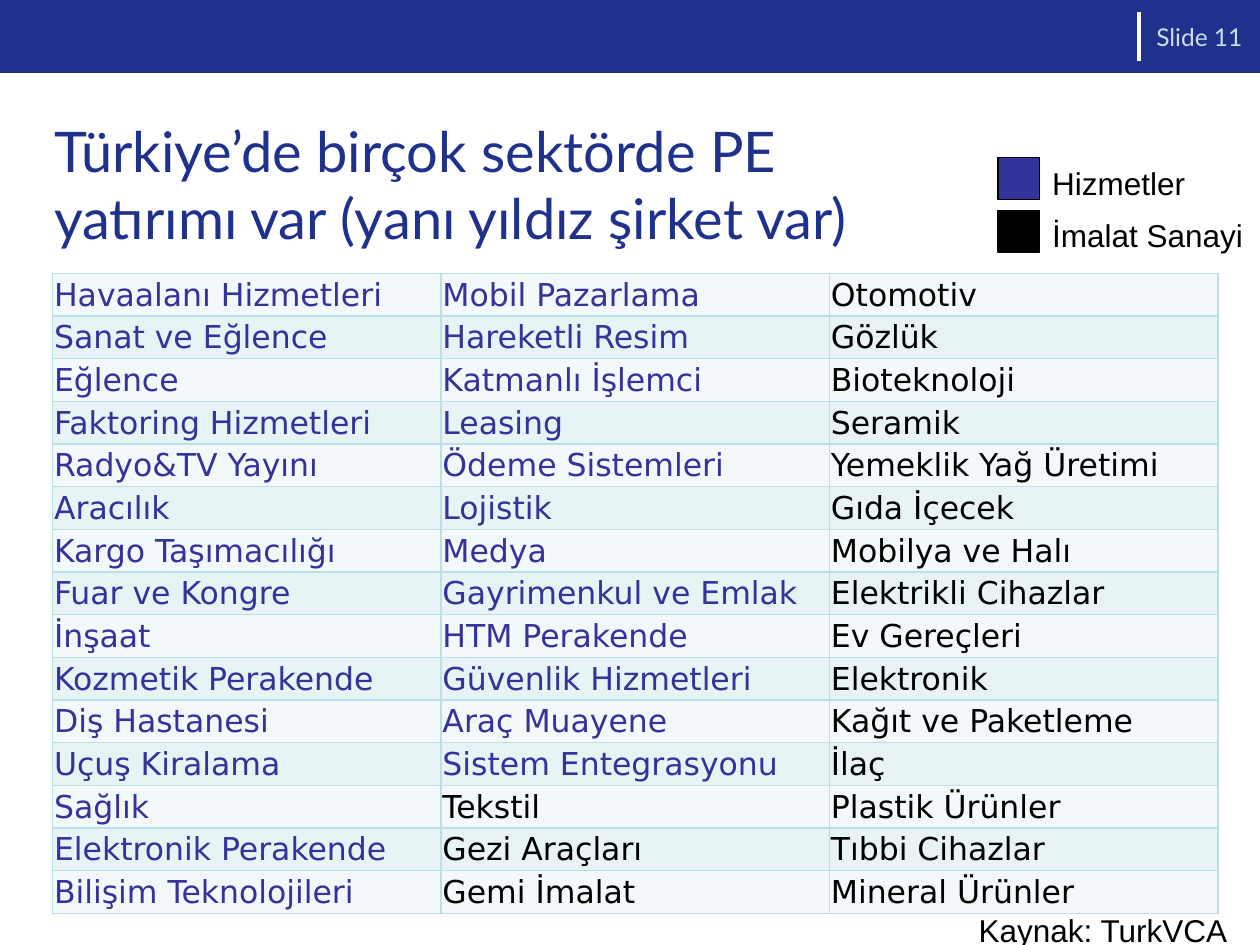
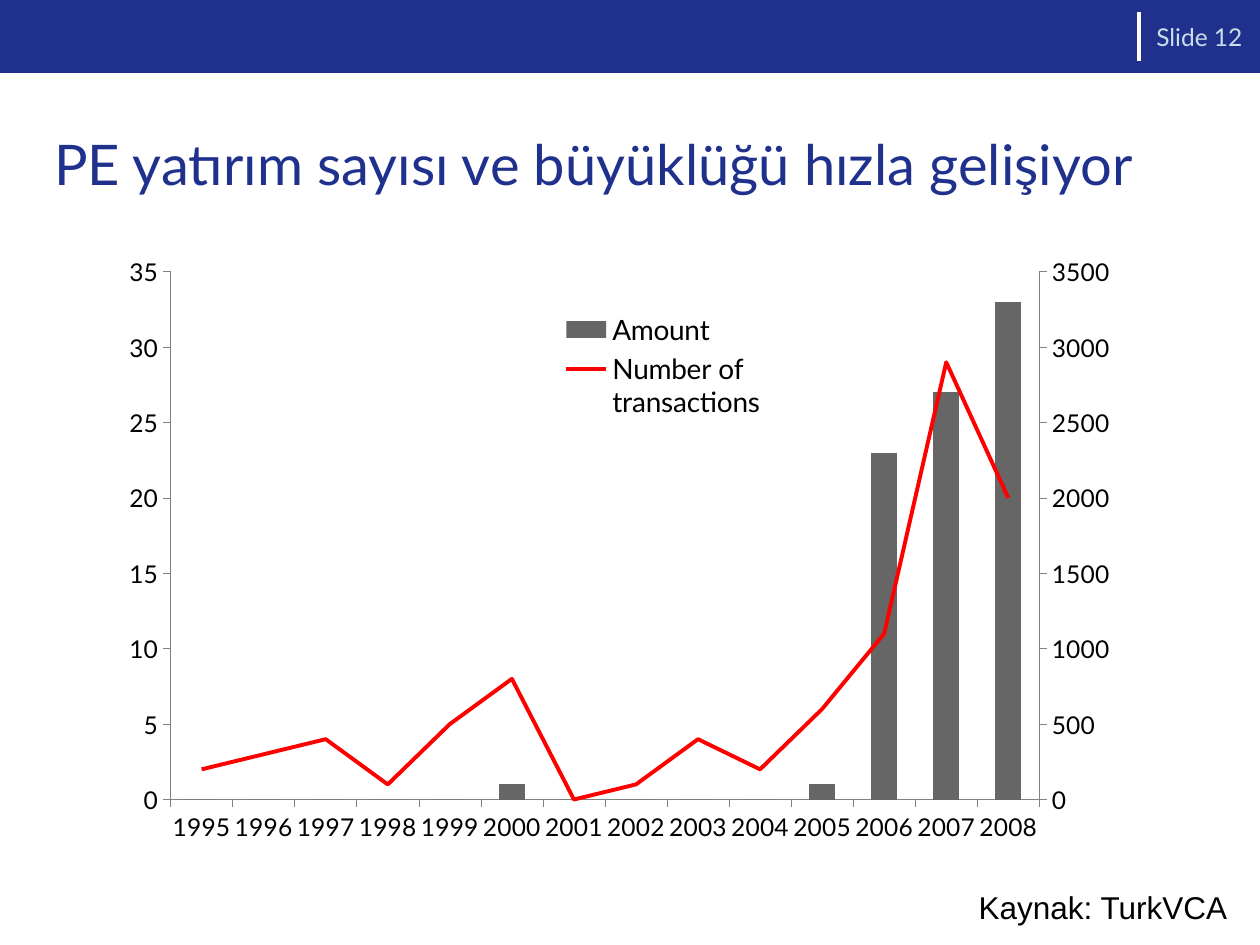
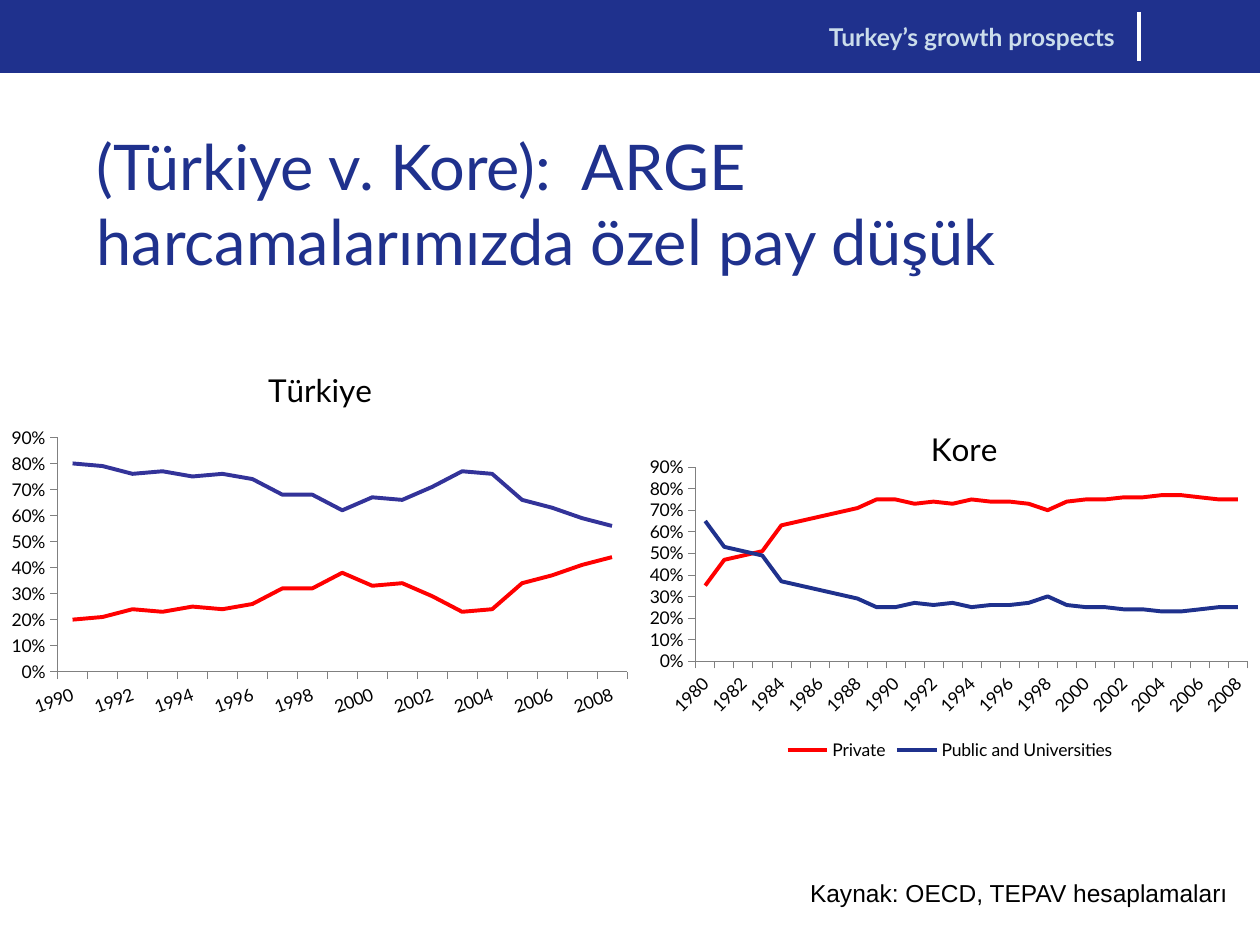
"""Build three slides on private equity and R&D spending in Türkiye."""
import copy

import pptx
import pptx.chart.axis
import pptx.chart.data
import pptx.dml.color
import pptx.enum.chart
import pptx.enum.shapes
import pptx.enum.text
import pptx.oxml
import pptx.oxml.ns
import pptx.util

Cm = pptx.util.Cm
Pt = pptx.util.Pt
RGBColor = pptx.dml.color.RGBColor
ChartType = pptx.enum.chart.XL_CHART_TYPE
Anchor = pptx.enum.text.MSO_ANCHOR
Align = pptx.enum.text.PP_ALIGN
qn = pptx.oxml.ns.qn

NAVY = RGBColor(0x1F, 0x31, 0x8D)
INDIGO = RGBColor(0x33, 0x33, 0x99)
PALE_BLUE = RGBColor(0xCB, 0xDD, 0xEB)
TEAL = RGBColor(0xBB, 0xE0, 0xE3)
ROW_TINTS = (RGBColor(0xF3, 0xF9, 0xFA), RGBColor(0xE7, 0xF3, 0xF4))
GRAY = RGBColor(0x66, 0x66, 0x66)
AXIS_GRAY = RGBColor(0x80, 0x80, 0x80)
RED = RGBColor(0xFF, 0, 0)
BLACK = RGBColor(0, 0, 0)
WHITE = RGBColor(0xFF, 0xFF, 0xFF)
HEADING_FONT, BODY_FONT, TABLE_FONT = "Lato", "Arial", "DejaVu Sans"

SERVICES = [
    "Havaalanı Hizmetleri", "Sanat ve Eğlence", "Eğlence", "Faktoring Hizmetleri",
    "Radyo&TV Yayını", "Aracılık", "Kargo Taşımacılığı", "Fuar ve Kongre", "İnşaat",
    "Kozmetik Perakende", "Diş Hastanesi", "Uçuş Kiralama", "Sağlık",
    "Elektronik Perakende", "Bilişim Teknolojileri", "Mobil Pazarlama",
    "Hareketli Resim", "Katmanlı İşlemci", "Leasing", "Ödeme Sistemleri", "Lojistik",
    "Medya", "Gayrimenkul ve Emlak", "HTM Perakende", "Güvenlik Hizmetleri",
    "Araç Muayene", "Sistem Entegrasyonu",
]
MANUFACTURING = [
    "Tekstil", "Gezi Araçları", "Gemi İmalat", "Otomotiv", "Gözlük", "Bioteknoloji",
    "Seramik", "Yemeklik Yağ Üretimi", "Gıda İçecek", "Mobilya ve Halı",
    "Elektrikli Cihazlar", "Ev Gereçleri", "Elektronik", "Kağıt ve Paketleme", "İlaç",
    "Plastik Ürünler", "Tıbbi Cihazlar", "Mineral Ürünler",
]
SECTOR_ROWS, SECTOR_COLUMNS = 15, 3
SECTOR_KEY = [("Hizmetler", INDIGO, 3.23), ("İmalat Sanayi", BLACK, 4.39)]

DEAL_YEARS = range(1995, 2009)
DEAL_AMOUNTS = [0, 0, 0, 0, 0, 100, 0, 0, 0, 0, 100, 2300, 2700, 3300]
DEAL_COUNTS = [2, 3, 4, 1, 5, 8, 0, 1, 4, 2, 6, 11, 29, 20]

RESEARCH_SHARES = [
    {
        "country": "Türkiye", "years": range(1990, 2009), "public_color": INDIGO,
        "private": [.20, .21, .24, .23, .25, .24, .26, .32, .32, .38, .33, .34, .29, .23,
                    .24, .34, .37, .41, .44],
        "public": [.80, .79, .76, .77, .75, .76, .74, .68, .68, .62, .67, .66, .71, .77,
                   .76, .66, .63, .59, .56],
        "place": (0, 6.99, 12.9, 7.62), "plot": (.09, .24, .89, .62),
        "title_at": (.41, .04), "label_turn": -20, "legend": False,
    },
    {
        "country": "Kore", "years": range(1980, 2009), "public_color": NAVY,
        "private": [.35, .47, .49, .51, .63, .65, .67, .69, .71, .75, .75, .73, .74, .73,
                    .75, .74, .74, .73, .70, .74, .75, .75, .76, .76, .77, .77, .76, .75,
                    .75],
        "public": [.65, .53, .51, .49, .37, .35, .33, .31, .29, .25, .25, .27, .26, .27,
                   .25, .26, .26, .27, .30, .26, .25, .25, .24, .24, .23, .23, .24, .25,
                   .25],
        "place": (12.9, 7.62, 12.5, 7.82), "plot": (.09, .23, .89, .5),
        "title_at": (.46, .11), "label_turn": -45, "legend": True,
    },
]


def lengths(place):
    return [Cm(value) for value in place]


def xml(text):
    return pptx.oxml.parse_xml(text.replace("NS", pptx.oxml.ns.nsdecls("a", "c"), 1))


def set_font(font, name, size, color, bold=False):
    font.name, font.size, font.bold = name, Pt(size), bold
    font.color.rgb = color


def add_text(slide, text, place, font, size, color, anchor=Anchor.TOP, wrap=True,
             align=Align.LEFT, bold=False):
    frame = slide.shapes.add_textbox(*lengths(place)).text_frame
    frame.text = text
    frame.word_wrap = wrap
    frame.vertical_anchor = anchor
    frame.paragraphs[0].alignment = align
    set_font(frame.paragraphs[0].runs[0].font, font, size, color, bold)


def add_box(slide, place, color, outline=None):
    box = slide.shapes.add_shape(pptx.enum.shapes.MSO_SHAPE.RECTANGLE, *lengths(place))
    box.shadow.inherit = False
    box.fill.solid()
    box.fill.fore_color.rgb = color
    if outline is None:
        box.line.fill.background()
    else:
        box.line.color.rgb = outline
        box.line.width = Pt(.75)


def start_slide(deck, title, title_place, size=32, anchor=Anchor.MIDDLE, number=None):
    slide = deck.slides.add_slide(deck.slide_layouts[6])
    add_box(slide, (0, 0, 25.4, 1.47), NAVY)
    divider = slide.shapes.add_connector(
        pptx.enum.shapes.MSO_CONNECTOR.STRAIGHT, *lengths((22.96, .25, 22.96, 1.22)))
    divider.line.color.rgb = WHITE
    divider.line.width = Pt(2.5)
    divider._element.spPr.append(xml("<a:effectLst NS/>"))
    add_text(slide, title, title_place, HEADING_FONT, size, NAVY, anchor)
    if number:
        add_text(slide, f"Slide {number}", (23.06, 0, 2.34, 1.5), HEADING_FONT, 14,
                 PALE_BLUE, Anchor.MIDDLE)
    return slide


def add_source(slide, source, place, size=18):
    add_text(slide, f"Kaynak: {source}", place, BODY_FONT, size, BLACK, wrap=False)


def add_sector_table(slide):
    table = slide.shapes.add_table(
        SECTOR_ROWS, SECTOR_COLUMNS, *lengths((1.06, 5.51, 23.49, 12.9))).table
    table.first_row = table.horz_banding = False
    for row in table.rows:
        row.height = Cm(.86)
    for index, sector in enumerate(SERVICES + MANUFACTURING):
        column, row = divmod(index, SECTOR_ROWS)
        cell = table.cell(row, column)
        cell.text = sector
        cell.vertical_anchor = Anchor.MIDDLE
        cell.margin_left = cell.margin_right = cell.margin_top = Cm(.03)
        cell.margin_bottom = 0
        cell.fill.solid()
        cell.fill.fore_color.rgb = ROW_TINTS[row % 2]
        set_font(cell.text_frame.paragraphs[0].runs[0].font, TABLE_FONT, 18,
                 INDIGO if index < len(SERVICES) else BLACK)
        for position, side in enumerate("LRTB"):
            cell._tc.get_or_add_tcPr().insert(position, xml(
                f'<a:ln{side} NS w="12700"><a:solidFill><a:srgbClr val="{TEAL}"/>'
                f'</a:solidFill></a:ln{side}>'))


def place_part(part, x, y, width=None, height=None, inner=False):
    for old in part.findall(qn("c:layout")):
        part.remove(old)
    target = '<c:layoutTarget val="inner"/>' if inner else ""
    sizes = f'<c:w val="{width}"/><c:h val="{height}"/>' if width else ""
    layout = xml(f'<c:layout NS><c:manualLayout>{target}<c:xMode val="edge"/>'
                 f'<c:yMode val="edge"/><c:x val="{x}"/><c:y val="{y}"/>{sizes}'
                 '</c:manualLayout></c:layout>')
    overlay = part.find(qn("c:overlay"))
    if overlay is None:
        part.insert(0, layout)
    else:
        overlay.addprevious(layout)


def style_axis(axis):
    axis.has_major_gridlines = False
    axis.major_tick_mark = pptx.enum.chart.XL_TICK_MARK.OUTSIDE
    axis.format.line.color.rgb = AXIS_GRAY
    axis.format.line.width = Pt(.37)


def set_scale(axis, top, step):
    axis.minimum_scale, axis.maximum_scale, axis.major_unit = 0, top, step


def style_line(series, color):
    series.format.line.color.rgb = color
    series.format.line.width = Pt(2.25)


def add_chart(slide, kind, years, named_values, place, plot, size):
    data = pptx.chart.data.CategoryChartData()
    data.categories = [str(year) for year in years]
    for name, values in named_values:
        data.add_series(name, values)
    chart = slide.shapes.add_chart(kind, *lengths(place), data).chart
    set_font(chart.font, HEADING_FONT, size, BLACK)
    chart.has_title = chart.has_legend = False
    chart.plots[0].vary_by_categories = False
    style_axis(chart.category_axis)
    style_axis(chart.value_axis)
    place_part(chart._chartSpace.xpath(".//c:plotArea")[0], *plot, inner=True)
    return chart


def add_legend(chart, position, size):
    chart.has_legend = True
    chart.legend.position = position
    chart.legend.include_in_layout = False
    set_font(chart.legend.font, HEADING_FONT, size, BLACK)


def move_counts_to_left_axis(chart):
    bars, category, amount = (
        chart._chartSpace.xpath(f".//c:{tag}")[0] for tag in ("barChart", "catAx", "valAx"))
    counts = bars.findall(qn("c:ser"))[1]
    for flag in counts.findall(qn("c:invertIfNegative")):
        counts.remove(flag)
    counts.find(qn("c:spPr")).addnext(xml('<c:marker NS><c:symbol val="none"/></c:marker>'))
    counts.append(xml('<c:smooth NS val="0"/>'))
    lines = xml('<c:lineChart NS><c:grouping val="standard"/><c:varyColors val="0"/>'
                '<c:marker val="1"/><c:axId val="7001"/><c:axId val="7002"/></c:lineChart>')
    lines.insert(2, counts)
    bars.addnext(lines)

    count_category, count = copy.deepcopy(category), copy.deepcopy(amount)
    for axis, own, crossed in ((count_category, "7001", "7002"), (count, "7002", "7001")):
        axis.find(qn("c:axId")).set("val", own)
        axis.find(qn("c:crossAx")).set("val", crossed)
    amount.addnext(count)
    count.addnext(count_category)
    pptx.chart.axis.CategoryAxis(count_category).visible = False
    set_scale(pptx.chart.axis.ValueAxis(count), 35, 5)
    for axis, side, crossing in ((amount, "r", "max"), (count, "l", "min")):
        axis.find(qn("c:axPos")).set("val", side)
        axis.find(qn("c:crosses")).set("val", crossing)


def add_deal_chart(slide):
    chart = add_chart(
        slide, ChartType.COLUMN_CLUSTERED, DEAL_YEARS,
        [("Amount", DEAL_AMOUNTS), ("Number of transactions", DEAL_COUNTS)],
        (1.73, 4.78, 21.36, 14), (.08, .05, .82, .76), 14)
    amounts, counts = chart.plots[0].series
    amounts.format.fill.solid()
    amounts.format.fill.fore_color.rgb = GRAY
    style_line(counts, RED)
    chart.plots[0].gap_width = 137
    set_scale(chart.value_axis, 3500, 500)
    add_legend(chart, pptx.enum.chart.XL_LEGEND_POSITION.RIGHT, 16)
    place_part(chart.legend._element, .44, .1, .21, .17)
    move_counts_to_left_axis(chart)


def add_research_chart(slide, research):
    chart = add_chart(
        slide, ChartType.LINE, research["years"],
        [("Private", research["private"]), ("Public and Universities", research["public"])],
        research["place"], research["plot"], 10)
    for series, color in zip(chart.plots[0].series, (RED, research["public_color"])):
        style_line(series, color)
        series.smooth = False
    set_scale(chart.value_axis, .9, .1)
    chart.value_axis.tick_labels.number_format = "0%"
    chart.value_axis.tick_labels.number_format_is_linked = False
    set_font(chart.category_axis.tick_labels.font, HEADING_FONT, 10, BLACK)
    label_body = chart._chartSpace.xpath(".//c:catAx/c:txPr/a:bodyPr")[0]
    label_body.set("rot", str(research["label_turn"] * 60000))
    chart.has_title = True
    heading = chart.chart_title.text_frame
    heading.text = research["country"]
    set_font(heading.paragraphs[0].runs[0].font, HEADING_FONT, 18, BLACK)
    place_part(chart.chart_title._element, *research["title_at"])
    if research["legend"]:
        add_legend(chart, pptx.enum.chart.XL_LEGEND_POSITION.BOTTOM, 10)


def main():
    deck = pptx.Presentation()
    deck.slide_width, deck.slide_height = Cm(25.4), Cm(19.05)

    sectors = start_slide(
        deck, "Türkiye’de birçok sektörde PE yatırımı var (yanı yıldız şirket var)",
        (.84, 2.54, 17.35, 2.34), number=11)
    add_sector_table(sectors)
    for index, (label, color, width) in enumerate(SECTOR_KEY):
        top = 3.18 + index * 1.06
        add_box(sectors, (20.12, top, .84, .84), color, BLACK)
        add_text(sectors, label, (20.96, top, width, 1.02), BODY_FONT, 18, BLACK, wrap=False)
    add_source(sectors, "TurkVCA", (19.48, 18.24, 5.56, 1.02))

    deals = start_slide(deck, "PE yatırım sayısı ve büyüklüğü hızla gelişiyor",
                        (.84, 2.11, 23.7, 2.34), number=12)
    add_deal_chart(deals)
    add_source(deals, "TurkVCA", (19.48, 17.78, 5.56, 1.02))

    spending = start_slide(
        deck, "(Türkiye v. Kore):  ARGE harcamalarımızda özel pay düşük",
        (1.7, 2.44, 22.02, 3.33), size=36, anchor=Anchor.TOP)
    add_text(spending, "Turkey’s growth prospects", (5.28, 0, 17.45, 1.47), HEADING_FONT, 14,
             PALE_BLUE, Anchor.MIDDLE, align=Align.RIGHT, bold=True)
    for research in RESEARCH_SHARES:
        add_research_chart(spending, research)
    add_source(spending, "OECD, TEPAV hesaplamaları", (16.08, 17.58, 8.99, .86), 14)

    deck.save("out.pptx")


if __name__ == "__main__":
    main()
